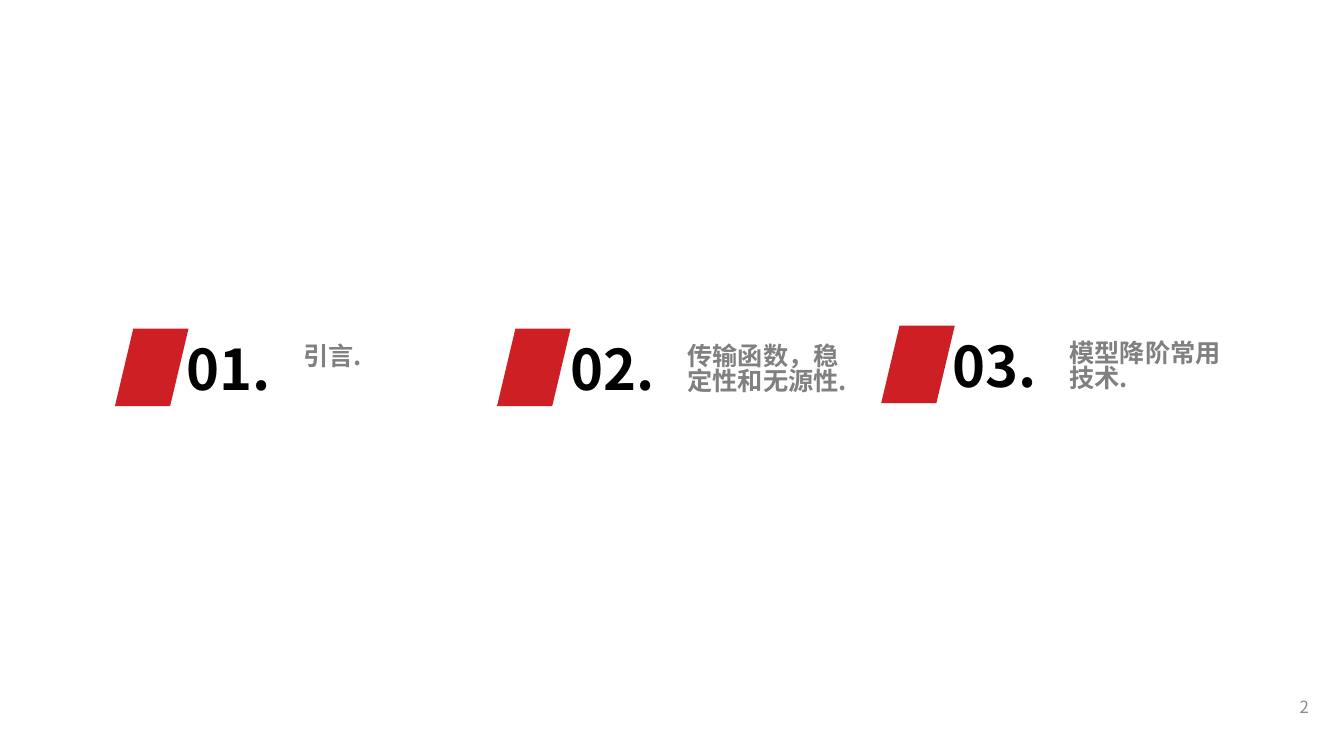
from dataclasses import dataclass
from pptx import Presentation
from pptx.dml.color import RGBColor
from pptx.enum.shapes import MSO_SHAPE as Shape
from pptx.enum.text import MSO_ANCHOR as Anchor, PP_ALIGN as Align
from pptx.oxml.ns import qn
from pptx.util import Inches, Pt


@dataclass(frozen=True)
class Theme:
    font: str = "Noto Sans CJK SC"
    accent: str = "CD1F24"
    number: str = "000000"
    title: str = "808080"
    page: str = "8C8C8C"
    number_size: int = 40
    title_size: int = 18
    page_size: int = 12
    tight: float = 0.85


THEME = Theme()
CHAPTERS = [
    ("01.", "引言.", 1.14, 3.26, 0.61),
    ("02.", "传输函数，稳定性和无源性.", 4.93, 3.26, 0.63),
    ("03.", "模型降阶常用技术.", 8.74, 3.23, 0.61),
]


def add_text(slide, box, text, size, color, bold=False, wrap=True,
             align=Align.LEFT, anchor=Anchor.TOP, spacing=1.0):
    frame = slide.shapes.add_textbox(*map(Inches, box)).text_frame
    frame.text = text
    frame.word_wrap = wrap
    frame.vertical_anchor = anchor
    paragraph = frame.paragraphs[0]
    paragraph.alignment = align
    paragraph.line_spacing = spacing
    run = paragraph.runs[0]
    run.font.name = THEME.font
    run.font.size = Pt(size)
    run.font.bold = bold
    run.font.color.rgb = RGBColor.from_string(color)
    east_asian = run._r.get_or_add_rPr().makeelement(qn("a:ea"), {"typeface": THEME.font})
    run.font._element.find(qn("a:latin")).addnext(east_asian)


def add_chapter(slide, number, title, left, top, number_offset):
    text_left, text_top = left + number_offset, top + 0.11
    add_text(slide, (text_left, text_top, 1.05, 0.39), number, THEME.number_size,
             THEME.number, bold=True, wrap=False, spacing=THEME.tight)
    add_text(slide, (text_left + 1.16, text_top, 1.74, 1.38), title, THEME.title_size,
             THEME.title, bold=True, spacing=THEME.tight)
    marker = slide.shapes.add_shape(
        Shape.PARALLELOGRAM, *map(Inches, (left, top, 0.73, 0.77)))
    marker.shadow.inherit = False
    marker.fill.solid()
    marker.fill.fore_color.rgb = RGBColor.from_string(THEME.accent)
    marker.line.fill.background()


def add_page_number(slide, number):
    add_text(slide, (10.08, 6.81, 3, 0.4), number, THEME.page_size, THEME.page,
             align=Align.RIGHT, anchor=Anchor.MIDDLE)


def main():
    presentation = Presentation()
    presentation.slide_width = Inches(13.33)
    presentation.slide_height = Inches(7.5)
    slide = presentation.slides.add_slide(presentation.slide_layouts[6])
    add_page_number(slide, "2")
    for chapter in CHAPTERS:
        add_chapter(slide, *chapter)
    presentation.save("out.pptx")


if __name__ == "__main__":
    main()
